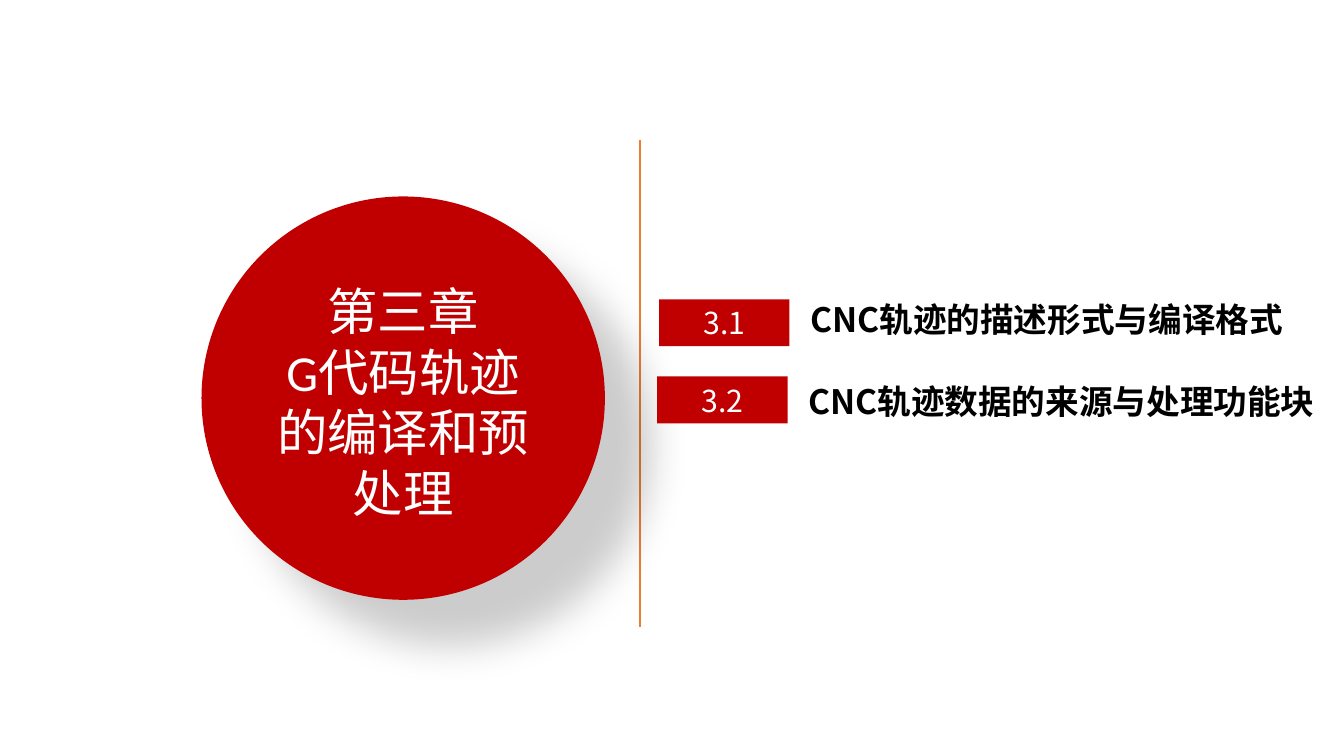
from lxml import etree
from pptx import Presentation
from pptx.dml.color import RGBColor
from pptx.enum.shapes import MSO_CONNECTOR, MSO_SHAPE
from pptx.enum.text import MSO_ANCHOR, MSO_AUTO_SIZE, PP_ALIGN
from pptx.oxml import parse_xml
from pptx.oxml.ns import nsdecls, qn
from pptx.util import Inches, Pt

RED = RGBColor(0xC0, 0x00, 0x00)
ORANGE = RGBColor(0xED, 0x7D, 0x31)
WHITE = RGBColor(0xFF, 0xFF, 0xFF)
BLACK = RGBColor(0x00, 0x00, 0x00)
STRAIGHT = MSO_CONNECTOR.STRAIGHT
OVAL, RECTANGLE = MSO_SHAPE.OVAL, MSO_SHAPE.RECTANGLE
CENTER, LEFT = PP_ALIGN.CENTER, PP_ALIGN.LEFT
MIDDLE, TOP = MSO_ANCHOR.MIDDLE, MSO_ANCHOR.TOP
NO_AUTOFIT = MSO_AUTO_SIZE.NONE
CJK_FONT = "Noto Sans CJK SC"
LATIN_FONT = "Calibri"
TITLE_LAYOUT = 5


class ChapterSlide:
    """Draws chapter elements in percentages of the slide's width and height."""

    def __init__(self, presentation):
        self.width = presentation.slide_width
        self.height = presentation.slide_height
        self.slide = presentation.slides.add_slide(presentation.slide_layouts[TITLE_LAYOUT])
        self.shapes = self.slide.shapes

    def box(self, left, top, width, height):
        return (round(self.width * left / 100), round(self.height * top / 100),
                round(self.width * width / 100), round(self.height * height / 100))

    def format_text(self, paragraph, size, color, bold=False, align=LEFT, latin=CJK_FONT):
        paragraph.alignment = align
        for run in paragraph.runs:
            run.font.size = Pt(size)
            run.font.bold = bold
            run.font.name = latin
            run.font.color.rgb = color
            east_asian = etree.SubElement(run.font._element, qn("a:ea"))
            east_asian.set("typeface", CJK_FONT)

    def clear_margins(self, frame):
        frame.margin_left = frame.margin_right = 0
        frame.margin_top = frame.margin_bottom = 0

    def divider(self, left, top, bottom):
        x, start, _, end = self.box(left, top, 0, bottom)
        line = self.shapes.add_connector(STRAIGHT, x, end, x, start)
        line.line.color.rgb = ORANGE
        line.line.width = Pt(1.5)
        etree.SubElement(line.element.spPr, qn("a:effectLst"))

    def filled_shape(self, kind, box):
        shape = self.shapes.add_shape(kind, *self.box(*box))
        shape.shadow.inherit = False
        shape.fill.solid()
        shape.fill.fore_color.rgb = RED
        shape.line.fill.background()
        return shape

    def circle(self, box):
        circle = self.filled_shape(OVAL, box)
        circle.line.color.rgb = RED
        circle.line.width = Pt(3)
        effects = circle.element.spPr.find(qn("a:effectLst"))
        effects.append(parse_xml(
            f'<a:outerShdw {nsdecls("a")} blurRad="{Pt(29)}" dist="{Pt(46)}" '
            'dir="2700000" algn="tl" rotWithShape="0"><a:srgbClr val="000000">'
            '<a:alpha val="20000"/></a:srgbClr></a:outerShdw>'))

    def title(self, text, box):
        title = self.shapes.title
        title.left, title.top, title.width, title.height = self.box(*box)
        self.shapes.element.append(title.element)
        frame = title.text_frame
        frame.text = text
        frame.word_wrap = True
        frame.auto_size = NO_AUTOFIT
        frame.vertical_anchor = MIDDLE
        self.clear_margins(frame)
        for paragraph, latin in zip(frame.paragraphs, (CJK_FONT, LATIN_FONT)):
            paragraph.line_spacing = Pt(43.2)
            self.format_text(paragraph, 36, WHITE, align=CENTER, latin=latin)

    def badge(self, number, box):
        frame = self.filled_shape(RECTANGLE, box).text_frame
        frame.text = number
        frame.vertical_anchor = MIDDLE
        self.clear_margins(frame)
        self.format_text(frame.paragraphs[0], 21.6, WHITE, align=CENTER)

    def heading(self, text, box):
        frame = self.shapes.add_textbox(*self.box(*box)).text_frame
        frame.text = text
        frame.word_wrap = False
        frame.vertical_anchor = TOP
        self.format_text(frame.paragraphs[0], 24, BLACK, bold=True)

    def section(self, number, text, left, badge_top, text_top, text_width):
        self.heading(text, (left + 10.5, text_top, text_width, 6.67))
        self.badge(number, (left, badge_top, 9.7, 6.2))


def main():
    presentation = Presentation()
    presentation.slide_width = Inches(13.33)
    presentation.slide_height = Inches(7.5)
    chapter = ChapterSlide(presentation)
    chapter.divider(47.63, 18.53, 82.93)
    chapter.circle((15.15, 26.27, 29.7, 52.8))
    chapter.title("第三章\nG代码轨迹的编译和预处理", (19.5, 34.4, 21, 37.34))
    chapter.section("3.1", "CNC轨迹的描述形式与编译格式", 49.05, 39.6, 38.93, 38.85)
    chapter.section("3.2", "CNC轨迹数据的来源与处理功能块", 48.9, 49.8, 49.73, 40.65)
    presentation.save("out.pptx")


if __name__ == "__main__":
    main()
